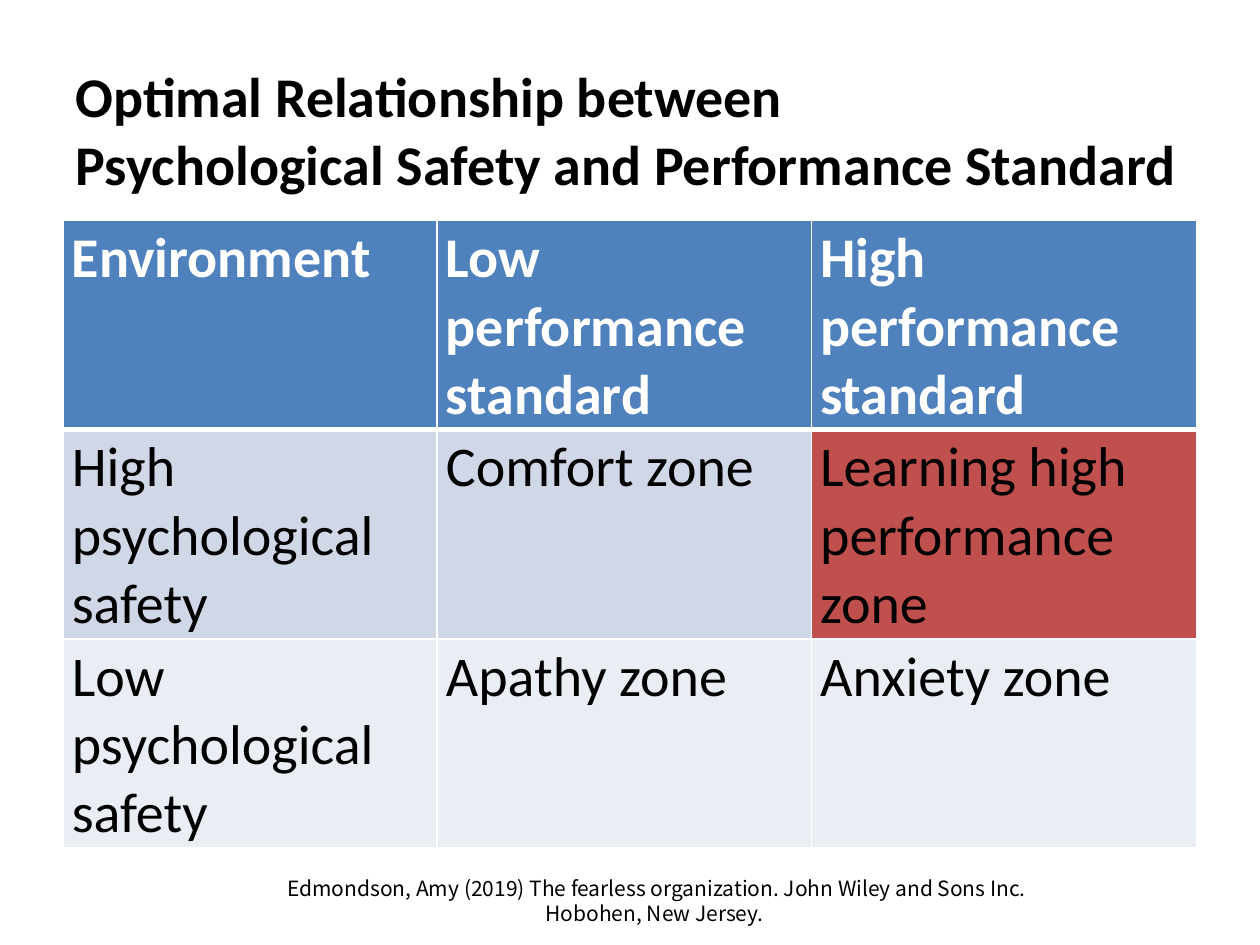
import pptx
import pptx.dml.color
import pptx.enum.text
import pptx.oxml
import pptx.oxml.ns
import pptx.util
from pptx.dml.color import RGBColor
from pptx.util import Inches

BLACK = RGBColor(0x00, 0x00, 0x00)
WHITE = RGBColor(0xFF, 0xFF, 0xFF)
HEADER = RGBColor(0x4F, 0x81, 0xBD)
BAND_DARK = RGBColor(0xD0, 0xD8, 0xE8)
BAND_LIGHT = RGBColor(0xE9, 0xED, 0xF4)
OPTIMAL = RGBColor(0xC0, 0x50, 0x4D)

ZONES = [
    ("Environment", "Low performance standard", "High performance standard"),
    ("High psychological safety", "Comfort zone", "Learning high performance zone"),
    ("Low psychological safety", "Apathy zone", "Anxiety zone"),
]
ROW_FILLS = (HEADER, BAND_DARK, BAND_LIGHT)
OPTIMAL_CELL = (1, 2)


def style(p, size, color, bold=False, font="Calibri"):
    for r in p.runs:
        r.font.name = font
        r.font.size = pptx.util.Pt(size)
        r.font.bold = bold
        r.font.color.rgb = color


def set_insets(target, x, y):
    target.margin_left = target.margin_right = Inches(x)
    target.margin_top = target.margin_bottom = Inches(y)


def set_borders(cell, bottom):
    """White lines on all four sides; bottom is the lower line's width in points."""
    tcPr = cell._tc.get_or_add_tcPr()
    widths = {"lnL": 1, "lnR": 1, "lnT": 1, "lnB": bottom}
    for i, (side, width) in enumerate(widths.items()):
        tcPr.insert(i, pptx.oxml.parse_xml(
            f'<a:{side} {pptx.oxml.ns.nsdecls("a")} w="{pptx.util.Pt(width)}">'
            f'<a:solidFill><a:srgbClr val="{WHITE}"/></a:solidFill></a:{side}>'))


def add_text(slide, box, text):
    tf = slide.shapes.add_textbox(*map(Inches, box)).text_frame
    tf.word_wrap = True
    tf.text = text
    return tf


def add_title(slide, box):
    tf = add_text(slide, box, "Optimal Relationship between \v"
                              "Psychological Safety and Performance Standard")
    tf.vertical_anchor = pptx.enum.text.MSO_ANCHOR.MIDDLE
    style(tf.paragraphs[0], 32, BLACK, bold=True)


def add_zone_table(slide, box):
    table = slide.shapes.add_table(3, 3, *map(Inches, box)).table
    for column, width in zip(table.columns, (2.97, 2.97, 3.06)):
        column.width = Inches(width)
    for i, texts in enumerate(ZONES):
        is_header = i == 0
        for j, text in enumerate(texts):
            cell = table.cell(i, j)
            cell.text = text
            set_insets(cell, 0.07, 0.03)
            cell.fill.solid()
            cell.fill.fore_color.rgb = OPTIMAL if (i, j) == OPTIMAL_CELL else ROW_FILLS[i]
            set_borders(cell, 3 if is_header else 1)
            style(cell.text_frame.paragraphs[0], 32,
                  WHITE if is_header else BLACK, bold=is_header)


def add_citation(slide, box):
    tf = add_text(slide, box, "Edmondson, Amy (2019) The fearless organization. "
                              "John Wiley and Sons Inc. Hobohen, New Jersey. ")
    set_insets(tf, 0.08, 0.04)
    p = tf.paragraphs[0]
    p.alignment = pptx.enum.text.PP_ALIGN.CENTER
    p.line_spacing = pptx.util.Pt(14.3)
    p.space_after = pptx.util.Pt(6)
    style(p, 12, BLACK, font="Noto Sans CJK KR")


def main():
    prs = pptx.Presentation()
    prs.slide_width, prs.slide_height = Inches(10), Inches(7.5)
    slide = prs.slides.add_slide(prs.slide_layouts[6])
    add_title(slide, (0.5, 0.3, 9.14, 1.45))
    add_zone_table(slide, (0.5, 1.75, 9, 4.95))
    add_citation(slide, (1.84, 6.91, 6.75, 0.56))
    prs.save("out.pptx")


if __name__ == "__main__":
    main()
